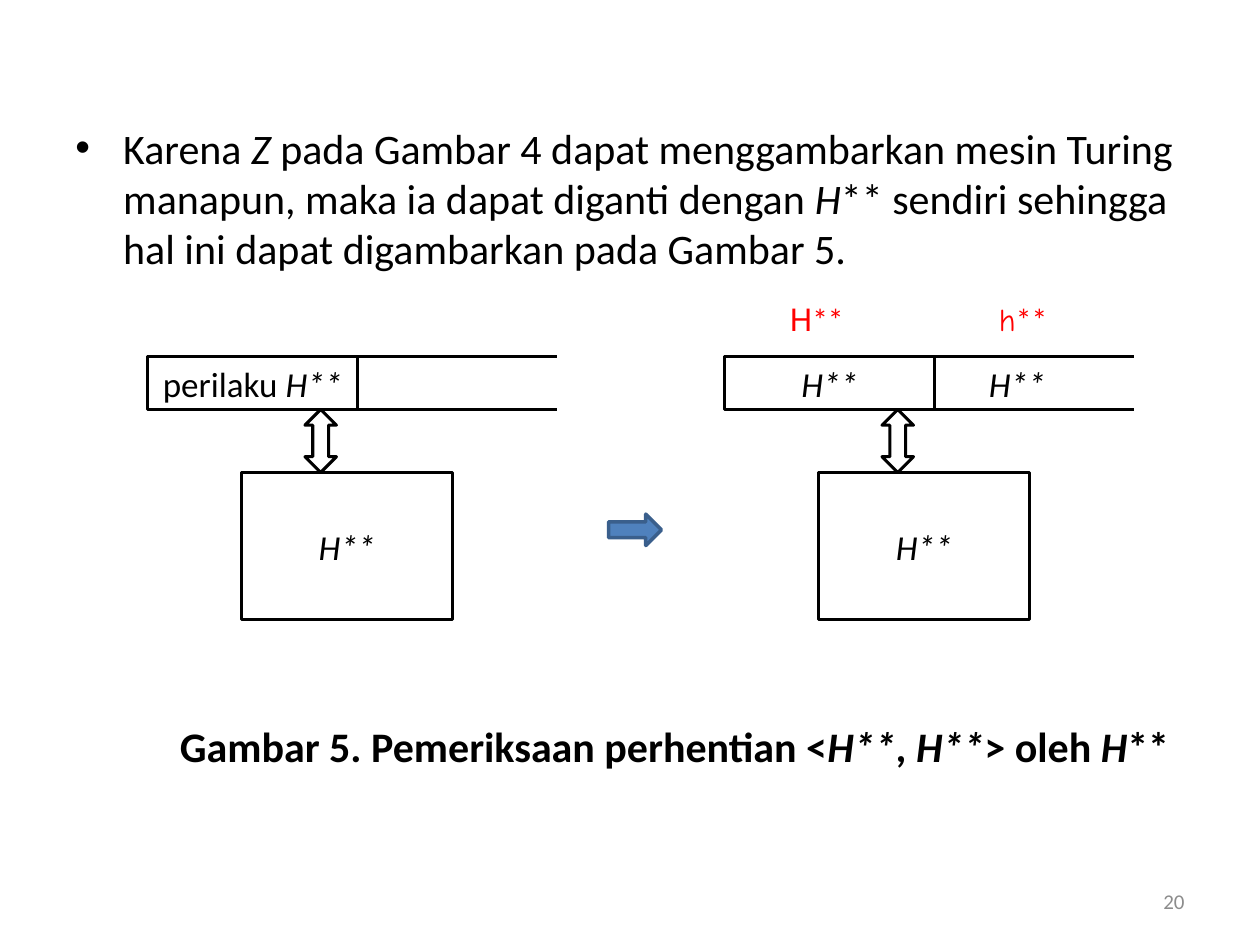
from dataclasses import dataclass

from lxml.etree import SubElement
from pptx import Presentation
from pptx.dml.color import RGBColor
from pptx.enum.shapes import MSO_CONNECTOR as Connector, MSO_SHAPE as Shape
from pptx.enum.text import MSO_ANCHOR as Anchor, MSO_AUTO_SIZE as AutoSize, PP_ALIGN as Align
from pptx.oxml.ns import qn
from pptx.util import Inches, Pt


@dataclass(frozen=True)
class Theme:
    font: str = "Calibri"
    ink: str = "000000"
    muted: str = "8C8C8C"
    accent: str = "FF0000"
    arrow_fill: str = "4F81BD"
    arrow_line: str = "3A5F8C"
    body: int = 24
    label: int = 20
    mark: int = 18
    number: int = 12
    thick: float = 1.75
    thin: float = 0.75


class SlideBuilder:
    def __init__(self, slide, theme):
        self.slide = slide
        self.theme = theme

    def add_runs(self, paragraph, runs, size, color=None, bold=False):
        """Add (text, italic[, font]) runs to a paragraph."""
        for text, italic, *font in runs:
            run = paragraph.add_run()
            run.text = text
            run.font.name = font[0] if font else self.theme.font
            run.font.size = Pt(size)
            run.font.bold = bold
            run.font.italic = italic
            run.font.color.rgb = RGBColor.from_string(color or self.theme.ink)

    def text(self, left, top, width, height, runs, size, color=None, bold=False,
             align=Align.LEFT, anchor=Anchor.TOP, wrap=True, grow=False):
        box = self.slide.shapes.add_textbox(
            Inches(left), Inches(top), Inches(width), Inches(height))
        frame = box.text_frame
        frame.word_wrap = wrap
        frame.auto_size = AutoSize.SHAPE_TO_FIT_TEXT if grow else AutoSize.NONE
        frame.vertical_anchor = anchor
        paragraph = frame.paragraphs[0]
        paragraph.alignment = align
        self.add_runs(paragraph, runs, size, color, bold)
        return paragraph

    def bullet(self, left, top, width, height, runs, indent):
        paragraph = self.text(left, top, width, height, runs, self.theme.body)
        properties = paragraph._p.get_or_add_pPr()
        properties.set("marL", str(Inches(indent)))
        properties.set("indent", str(-Inches(indent)))
        SubElement(properties, qn("a:buFont"), typeface="Arial")
        SubElement(properties, qn("a:buChar"), char="•")

    def shape(self, kind, left, top, width, height, runs=(), fill=None, line=None, weight=None):
        shape = self.slide.shapes.add_shape(
            kind, Inches(left), Inches(top), Inches(width), Inches(height))
        shape.shadow.inherit = False
        if fill:
            shape.fill.solid()
            shape.fill.fore_color.rgb = RGBColor.from_string(fill)
        else:
            shape.fill.background()
        shape.line.color.rgb = RGBColor.from_string(line or self.theme.ink)
        shape.line.width = Pt(weight or self.theme.thick)
        if runs:
            frame = shape.text_frame
            frame.word_wrap = True
            frame.vertical_anchor = Anchor.MIDDLE
            frame.paragraphs[0].alignment = Align.CENTER
            self.add_runs(frame.paragraphs[0], runs, self.theme.label)

    def line(self, x1, y1, x2, y2, weight):
        connector = self.slide.shapes.add_connector(
            Connector.STRAIGHT, Inches(x1), Inches(y1), Inches(x2), Inches(y2))
        connector.line.color.rgb = RGBColor.from_string(self.theme.ink)
        connector.line.width = Pt(weight)
        SubElement(connector._element.spPr, qn("a:effectLst"))

    def machine(self, left, cell_runs):
        """Draw an open-ended tape joined by a two-way arrow to its machine."""
        top, bottom, cell_width, tape_width = 2.83, 3.25, 1.67, 3.25
        cell_right, tape_right = left + cell_width, left + tape_width
        self.shape(Shape.RECTANGLE, left, top, cell_width, bottom - top, cell_runs)
        self.line(left + 1.42, bottom, tape_right, bottom, self.theme.thick)
        self.line(left + 1.58, top, tape_right, top, self.theme.thick)
        self.line(cell_right, top, cell_right, bottom, self.theme.thin)
        self.shape(Shape.RECTANGLE, left + 0.75, bottom + 0.5, cell_width, 1.17, [("H**", True)])
        self.shape(Shape.UP_DOWN_ARROW, left + 1.25, bottom, 0.25, 0.5)


def main():
    presentation = Presentation()
    presentation.slide_width, presentation.slide_height = Inches(10), Inches(7.5)
    theme = Theme()
    builder = SlideBuilder(
        presentation.slides.add_slide(presentation.slide_layouts[6]), theme)

    builder.bullet(0.5, 0.92, 9, 5.78, [
        ("Karena ", False),
        ("Z ", True),
        ("pada Gambar 4 dapat menggambarkan mesin Turing manapun, "
         "maka ia dapat diganti dengan ", False),
        ("H", True),
        ("** sendiri sehingga hal ini dapat digambarkan pada Gambar 5.", False),
    ], indent=0.38)
    builder.text(7.17, 6.95, 2.33, 0.4, [("20", False)], theme.number, theme.muted,
                 align=Align.RIGHT, anchor=Anchor.MIDDLE)

    builder.machine(1.17, [("perilaku", False), (" H**", True)])
    builder.machine(5.75, [("H**", True)])
    builder.text(7.75, 2.83, 0.93, 0.44, [("H**", True)], theme.label, grow=True)
    builder.shape(Shape.RIGHT_ARROW, 4.83, 4.08, 0.42, 0.25,
                  fill=theme.arrow_fill, line=theme.arrow_line, weight=2)

    builder.text(1.33, 5.67, 8.3, 0.5, [
        ("Gambar 5. Pemeriksaan perhentian <", False),
        ("H**", True),
        (", ", False),
        ("H**", True),
        ("> oleh ", False),
        ("H", True),
        ("**", False),
    ], theme.body, bold=True, wrap=False, grow=True)
    for left, width, letter, font in ((6.17, 0.67, "H", "Roboto"),
                                      (7.83, 0.58, "h", "Comic Neue")):
        builder.text(left, 2.33, width, 0.4, [(letter, False, font), ("**", False)],
                     theme.mark, theme.accent, wrap=False, grow=True)

    presentation.save("out.pptx")


if __name__ == "__main__":
    main()
